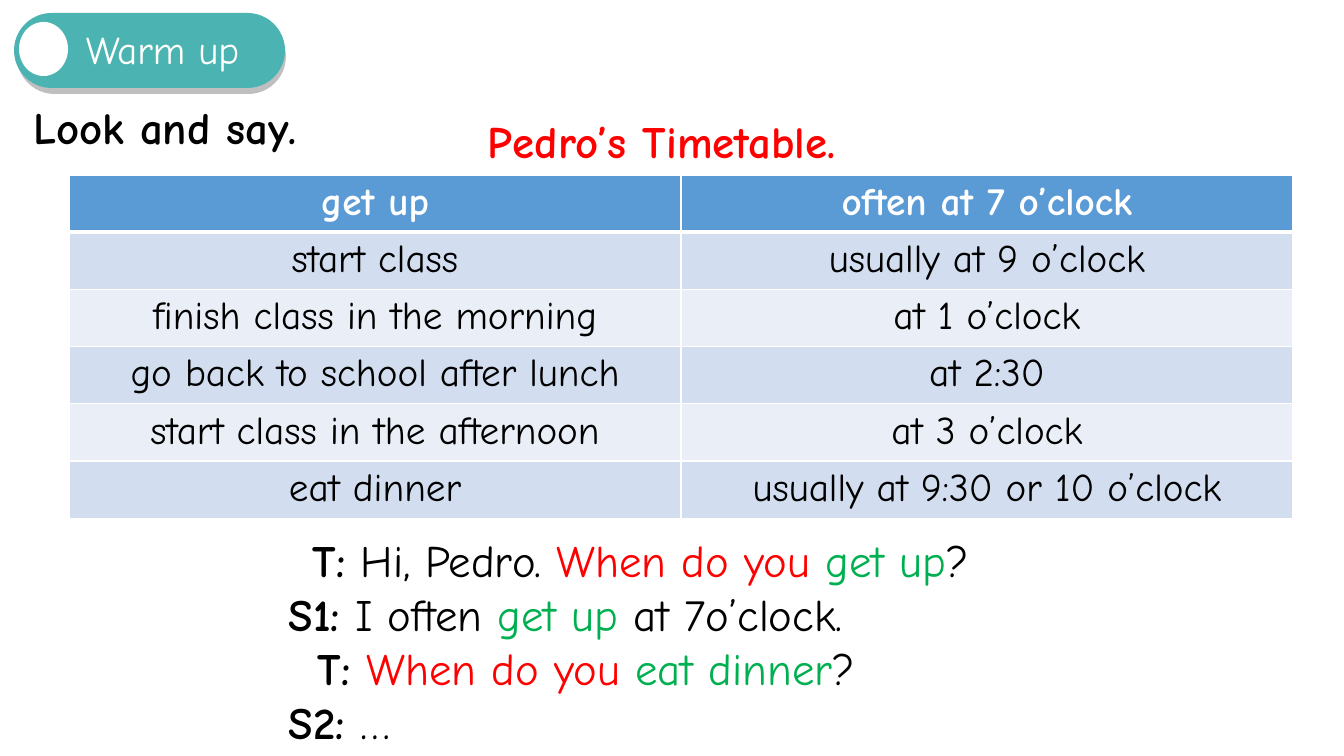
from lxml import etree
from pptx import Presentation
from pptx.dml.color import RGBColor
from pptx.enum.shapes import MSO_SHAPE
from pptx.enum.text import MSO_ANCHOR, MSO_AUTO_SIZE, PP_ALIGN
from pptx.oxml.ns import qn
from pptx.util import Emu, Pt

ROUNDED = MSO_SHAPE.ROUNDED_RECTANGLE
OVAL = MSO_SHAPE.OVAL
TOP = MSO_ANCHOR.TOP
NO_FIT = MSO_AUTO_SIZE.NONE
LEFT, CENTER = PP_ALIGN.LEFT, PP_ALIGN.CENTER

EMU_PER_PX = 914400 / 100.8
FONT = "Comic Neue"
COLORS = {
    "white": "FFFFFF", "black": "000000", "red": "FF0000", "green": "00B050",
    "teal": "4BB3B1", "grey": "BFBFBF",
    "header": "5B9BD5", "band_dark": "D2DEEF", "band_light": "EAEFF7",
}

TIMETABLE = [
    ("get up", "often at 7 o’clock"),
    ("start class", "usually at 9 o’clock"),
    ("finish class in the morning", "at 1 o’clock"),
    ("go back to school after lunch", "at 2:30"),
    ("start class in the afternoon", "at 3 o’clock"),
    ("eat dinner", "usually at 9:30 or 10 o’clock"),
]

# Each line: indent in px, speaker, then (text, colour) pieces
DIALOGUE = [
    (38, "T:", [(" Hi, Pedro. ", "black"), ("When do you ", "red"),
                ("get up", "green"), ("?", "black")]),
    (14, "S1:", [(" I often ", "black"), ("get up ", "green"),
                 ("at 7o’clock.", "black")]),
    (43, "T: ", [("When do you ", "red"), ("eat dinner", "green"),
                 ("?", "black")]),
    (14, "S2: ", [("…", "black")]),
]


def px(length):
    return Emu(round(length * EMU_PER_PX))


def box(*lengths):
    return [px(length) for length in lengths]


def rgb(name):
    return RGBColor.from_string(COLORS[name])


def style_font(font, size, color, bold=False):
    font.name = FONT
    font.size = Pt(size)
    font.bold = bold
    font.color.rgb = rgb(color)


def write_line(frame, text, size, color, bold=False, align=LEFT):
    frame.text = text
    paragraph = frame.paragraphs[0]
    paragraph.alignment = align
    style_font(paragraph.runs[0].font, size, color, bold)


def add_plain_shape(shapes, kind, bounds, color):
    shape = shapes.add_shape(kind, *box(*bounds))
    shape.shadow.inherit = False
    shape.fill.solid()
    shape.fill.fore_color.rgb = rgb(color)
    shape.line.fill.background()
    return shape


def add_label(shapes, bounds, text, size, color, bold=False):
    label = shapes.add_textbox(*box(*bounds))
    label.text_frame.word_wrap = True
    write_line(label.text_frame, text, size, color, bold)


def add_badge(slide):
    badge = slide.shapes.add_group_shape().shapes
    for bounds, color in (((17, 19, 269, 75), "grey"), ((14, 13, 271, 75), "teal")):
        pill = add_plain_shape(badge, ROUNDED, bounds, color)
        pill.adjustments[0] = 0.5
    add_plain_shape(badge, OVAL, (19, 22, 49, 54), "white")
    add_label(badge, (76, 20, 210, 59), "Warm up", 28, "white")


def set_title(slide, bounds, text):
    title = slide.shapes.title
    title.left, title.top, title.width, title.height = box(*bounds)
    frame = title.text_frame
    frame.auto_size = NO_FIT
    frame.vertical_anchor = TOP
    write_line(frame, text, 32, "black", bold=True)


def set_borders(cell, top, bottom):
    properties = cell._tc.get_or_add_tcPr()
    for side, width in (("L", 1), ("R", 1), ("T", top), ("B", bottom)):
        line = etree.SubElement(properties, qn(f"a:ln{side}"), w=str(Pt(width)))
        fill = etree.SubElement(line, qn("a:solidFill"))
        etree.SubElement(fill, qn("a:srgbClr"), val=COLORS["white"])


def add_timetable(slide, left, top, column_width, row_height):
    rows, columns = len(TIMETABLE), len(TIMETABLE[0])
    bounds = box(left, top, column_width * columns, row_height * rows)
    table = slide.shapes.add_table(rows, columns, *bounds).table
    for row_index, entries in enumerate(TIMETABLE):
        is_header = row_index == 0
        band = "band_dark" if row_index % 2 else "band_light"
        for column_index, entry in enumerate(entries):
            cell = table.cell(row_index, column_index)
            set_borders(cell, 3 if row_index == 1 else 1, 3 if is_header else 1)
            cell.fill.solid()
            cell.fill.fore_color.rgb = rgb("header" if is_header else band)
            write_line(cell.text_frame, entry, 28,
                       "white" if is_header else "black", is_header, CENTER)


def add_dialogue(slide, bounds):
    frame = slide.shapes.add_textbox(*box(*bounds)).text_frame
    frame.word_wrap = True
    for index, (indent, speaker, pieces) in enumerate(DIALOGUE):
        line = frame.add_paragraph() if index else frame.paragraphs[0]
        line._p.get_or_add_pPr().set("marL", str(px(indent)))
        for order, (text, color) in enumerate([(speaker, "black"), *pieces]):
            run = line.add_run()
            run.text = text
            style_font(run.font, 32, color, bold=order == 0)


def main():
    prs = Presentation()
    prs.slide_width, prs.slide_height = box(1344, 756)
    slide = prs.slides.add_slide(prs.slide_layouts[5])

    # Heading
    set_title(slide, (23, 95, 324, 65), "Look and say.")
    add_badge(slide)

    # Timetable with its caption
    add_label(slide.shapes, (478, 109, 429, 65), "Pedro’s Timetable.", 32, "red", True)
    add_timetable(slide, 69, 175, 612, 57)

    # Model dialogue
    add_dialogue(slide, (265, 528, 778, 228))

    prs.save("out.pptx")


if __name__ == "__main__":
    main()
